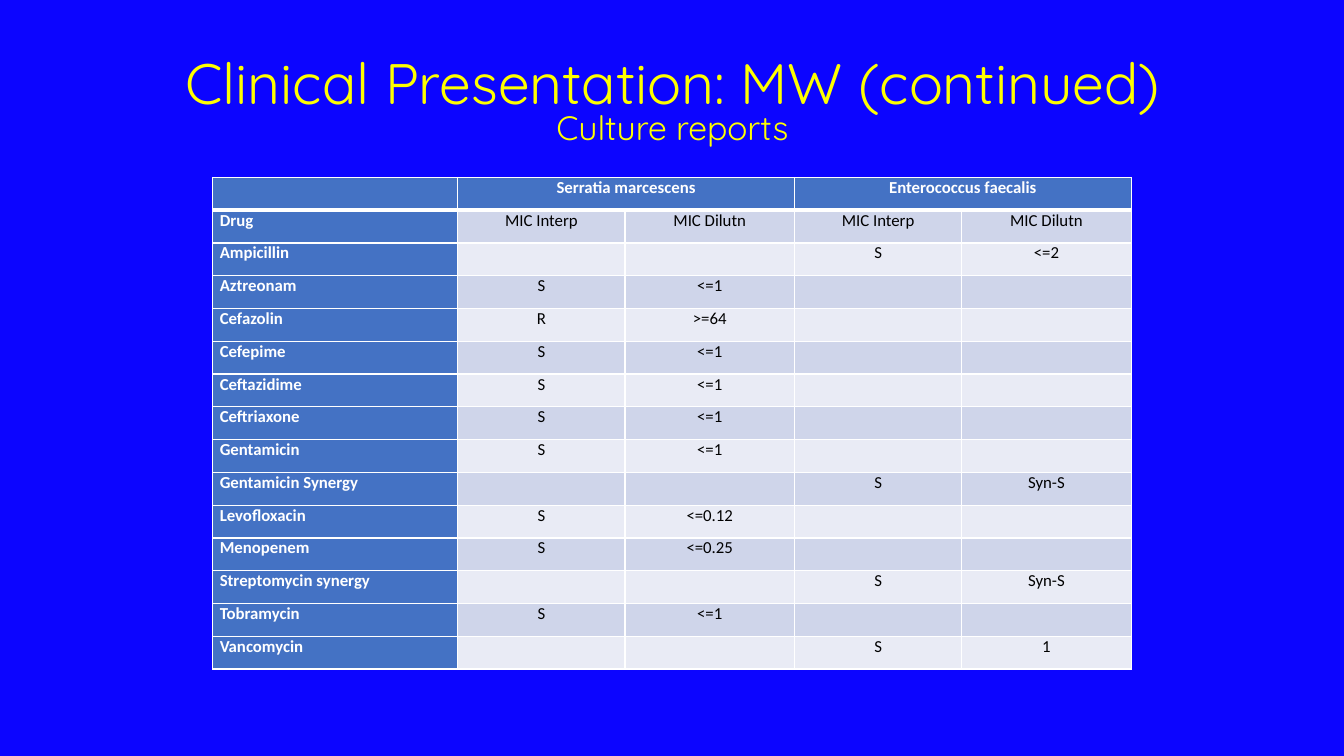
import dataclasses

import lxml.etree
import pptx
import pptx.dml.color
import pptx.enum.text
import pptx.oxml.ns
import pptx.table
import pptx.text.text
import pptx.util

Inches = pptx.util.Inches
RGBColor = pptx.dml.color.RGBColor
Align = pptx.enum.text.PP_ALIGN
Anchor = pptx.enum.text.MSO_ANCHOR

BACKGROUND = RGBColor(0x0C, 0x05, 0xFF)
YELLOW = RGBColor(0xFF, 0xFF, 0x00)
WHITE = RGBColor(0xFF, 0xFF, 0xFF)
BLACK = RGBColor(0x00, 0x00, 0x00)
HEADER_BLUE = RGBColor(0x44, 0x72, 0xC4)
DARK_BAND = RGBColor(0xCF, 0xD5, 0xEA)
LIGHT_BAND = RGBColor(0xE9, 0xEB, 0xF5)

COLUMN_WIDTHS = (2.43, 1.66, 1.68, 1.66, 1.68)
TABLE_HEIGHT = 4.88


@dataclasses.dataclass(frozen=True)
class Result:
    drug: str
    serratia: tuple[str, str] = ("", "")
    enterococcus: tuple[str, str] = ("", "")

    def cells(self) -> tuple[str, ...]:
        return (self.drug, *self.serratia, *self.enterococcus)


MEASURES = ("MIC Interp", "MIC Dilutn")
RESULTS = (
    Result("", ("Serratia marcescens", ""), ("Enterococcus faecalis", "")),
    Result("Drug", MEASURES, MEASURES),
    Result("Ampicillin", enterococcus=("S", "<=2")),
    Result("Aztreonam", ("S", "<=1")),
    Result("Cefazolin", ("R", ">=64")),
    Result("Cefepime", ("S", "<=1")),
    Result("Ceftazidime", ("S", "<=1")),
    Result("Ceftriaxone", ("S", "<=1")),
    Result("Gentamicin", ("S", "<=1")),
    Result("Gentamicin Synergy", enterococcus=("S", "Syn-S")),
    Result("Levofloxacin", ("S", "<=0.12")),
    Result("Menopenem", ("S", "<=0.25")),
    Result("Streptomycin synergy", enterococcus=("S", "Syn-S")),
    Result("Tobramycin", ("S", "<=1")),
    Result("Vancomycin", enterococcus=("S", "1")),
)


def write(paragraph: pptx.text.text._Paragraph, text: str, *, size: float,
          font: str, color: RGBColor, bold: bool = False,
          align: Align = Align.CENTER, spacing: float = 1.0) -> None:
    paragraph.alignment = align
    paragraph.line_spacing = spacing
    run = paragraph.add_run()
    run.text = text
    run.font.size = pptx.util.Pt(size)
    run.font.name = font
    run.font.bold = bold
    run.font.color.rgb = color


def add_borders(cell: pptx.table._Cell, widths: dict[str, float]) -> None:
    """Draw white borders; widths are in points, keyed by side L, R, T, B."""
    qn = pptx.oxml.ns.qn
    properties = cell._tc.get_or_add_tcPr()
    for side, width in widths.items():
        line = lxml.etree.SubElement(properties, qn(f"a:ln{side}"),
                                     w=str(int(pptx.util.Pt(width))))
        fill = lxml.etree.SubElement(line, qn("a:solidFill"))
        lxml.etree.SubElement(fill, qn("a:srgbClr"), val=str(WHITE))


def add_title(slide: pptx.slide.Slide) -> None:
    box = slide.shapes.add_textbox(Inches(0.92), Inches(0.46),
                                   Inches(11.5), Inches(1.45))
    frame = box.text_frame
    frame.word_wrap = True
    frame.vertical_anchor = Anchor.MIDDLE
    frame.margin_bottom = Inches(0.36)
    write(frame.paragraphs[0], "Clinical Presentation: MW (continued)",
          size=40.7, font="Quicksand", color=YELLOW, spacing=0.8)
    write(frame.add_paragraph(), "Culture reports",
          size=24.1, font="Quicksand", color=YELLOW, spacing=0.8)


def fill_cell(cell: pptx.table._Cell, text: str, row: int, column: int) -> None:
    heading = row == 0 or column == 0
    cell.margin_left = cell.margin_right = Inches(0.07)
    cell.margin_top = cell.margin_bottom = 0
    add_borders(cell, {"L": 1, "R": 1, "T": 3 if row == 1 else 1,
                       "B": 3 if row == 0 else 1})
    cell.fill.solid()
    band = DARK_BAND if row % 2 else LIGHT_BAND
    cell.fill.fore_color.rgb = HEADER_BLUE if heading else band
    if text:
        write(cell.text_frame.paragraphs[0], text, size=12, font="Calibri",
              color=WHITE if heading else BLACK, bold=heading,
              align=Align.CENTER if column else Align.LEFT)


def add_culture_table(slide: pptx.slide.Slide) -> None:
    table = slide.shapes.add_table(
        len(RESULTS), len(COLUMN_WIDTHS), Inches(2.11), Inches(1.76),
        Inches(sum(COLUMN_WIDTHS)), Inches(TABLE_HEIGHT)).table
    table.horz_banding = False
    for column, width in zip(table.columns, COLUMN_WIDTHS):
        column.width = Inches(width)
    for row, result in enumerate(RESULTS):
        table.rows[row].height = Inches(TABLE_HEIGHT / len(RESULTS))
        for column, text in enumerate(result.cells()):
            fill_cell(table.cell(row, column), text, row, column)
    for column in (1, 3):
        table.cell(0, column).merge(table.cell(0, column + 1))


def main() -> None:
    presentation = pptx.Presentation()
    presentation.slide_width = Inches(13.33)
    presentation.slide_height = Inches(7.5)
    slide = presentation.slides.add_slide(presentation.slide_layouts[6])
    slide.background.fill.solid()
    slide.background.fill.fore_color.rgb = BACKGROUND
    add_title(slide)
    add_culture_table(slide)
    presentation.save("out.pptx")


if __name__ == "__main__":
    main()
